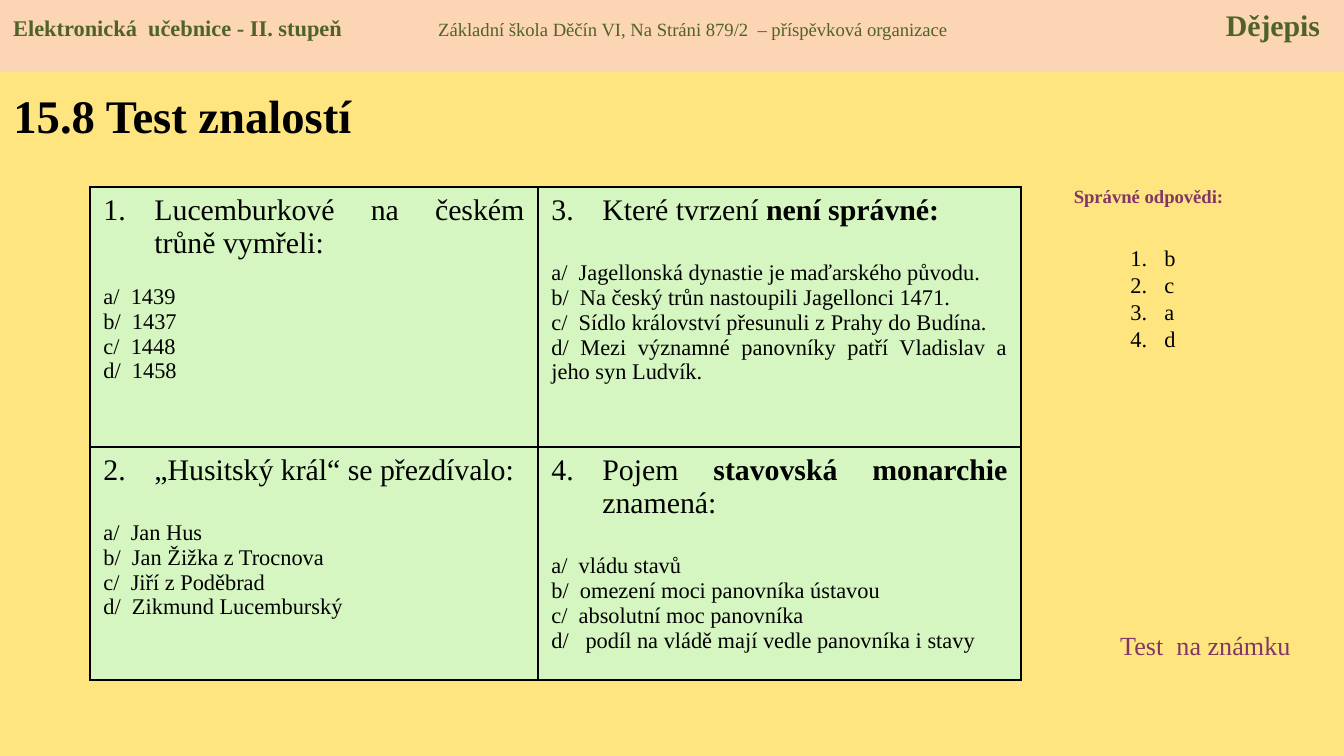
"""Builds a history quiz slide with a two-by-two question table and an answer key."""
from dataclasses import dataclass

from lxml import etree
from pptx import Presentation
from pptx import util as u
from pptx.dml.color import RGBColor
from pptx.enum import shapes, text
from pptx.oxml.ns import qn


@dataclass(frozen=True)
class Theme:
    font: str = "Times New Roman"
    ink: str = "000000"
    green: str = "4F6228"
    plum: str = "813763"
    page: str = "FFE580"
    banner: str = "FCD5B5"
    cell: str = "D5F6C0"
    title: int = 25
    question: int = 16
    note: int = 14
    body: int = 12
    small: int = 10


THEME = Theme()
PX = 914400 / 134.4
INDENT = 51
KEY_INDENT = 34

HEADER = [
    ("Elektronická  učebnice - II. stupeň", THEME.body, True),
    ("\tZákladní škola Děčín VI, Na Stráni 879/2  – příspěvková organizace", THEME.small, False),
    ("\tDějepis", THEME.question, True),
]
HEADER_TABS = [(425, "l"), (1307, "r")]
TITLE = "15.8 Test znalostí"
KEY_TITLE = "Správné odpovědi:"
KEY = ["b", "c", "a", "d"]
NOTE = "Test  na známku"
QUESTIONS = [
    ([("Lucemburkové na českém trůně vymřeli:", False)], 13,
     ["a/  1439", "b/  1437", "c/  1448", "d/  1458"]),
    ([("„Husitský král“ se přezdívalo:", False)], 18,
     ["a/  Jan Hus", "b/  Jan Žižka z Trocnova", "c/  Jiří z Poděbrad",
      "d/  Zikmund Lucemburský"]),
    ([("Které tvrzení ", False), ("není správné:", True)], 18,
     ["a/  Jagellonská dynastie je maďarského původu.",
      "b/  Na český trůn nastoupili Jagellonci 1471.",
      "c/  Sídlo království přesunuli z Prahy do Budína.",
      "d/ Mezi významné panovníky patří Vladislav a jeho syn Ludvík."]),
    ([("Pojem ", False), ("stavovská monarchie ", True), ("znamená:", False)], 18,
     ["a/  vládu stavů", "b/  omezení moci panovníka ústavou",
      "c/  absolutní moc panovníka",
      "d/   podíl na vládě mají vedle panovníka i stavy"]),
]
COLUMNS = [448, 483]
ROWS = [260, 233]


def px(value):
    return u.Emu(round(value * PX))


def area(*lengths):
    return [px(length) for length in lengths]


def style(span, size, color=THEME.ink, bold=False):
    span.font.name = THEME.font
    span.font.size = u.Pt(size)
    span.font.bold = bold
    span.font.color.rgb = RGBColor.from_string(color)


def add_spans(para, spans, color=THEME.ink):
    for words, size, bold in spans:
        span = para.add_run()
        span.text = words
        style(span, size, color, bold)


def paint(target, color):
    target.fill.solid()
    target.fill.fore_color.rgb = RGBColor.from_string(color)


def number(para, indent, start=1):
    props = para._p.get_or_add_pPr()
    props.set("marL", str(px(indent)))
    props.set("indent", str(-px(indent)))
    etree.SubElement(props, qn("a:buFont"), typeface=THEME.font)
    etree.SubElement(props, qn("a:buAutoNum"), type="arabicPeriod", startAt=str(start))


def add_borders(cell):
    props = cell._tc.get_or_add_tcPr()
    for side in ("lnL", "lnR", "lnT", "lnB"):
        line = etree.SubElement(props, qn(f"a:{side}"), w=str(u.Pt(1)))
        fill = etree.SubElement(line, qn("a:solidFill"))
        etree.SubElement(fill, qn("a:srgbClr"), val=THEME.ink)


def add_header(page):
    banner = page.shapes.add_shape(shapes.MSO_SHAPE.RECTANGLE, *area(0, 0, 1344, 72))
    banner.shadow.inherit = False
    paint(banner, THEME.banner)
    banner.line.fill.background()
    banner.text_frame.vertical_anchor = text.MSO_ANCHOR.TOP
    para = banner.text_frame.paragraphs[0]
    para.alignment = text.PP_ALIGN.LEFT
    add_spans(para, HEADER, THEME.green)
    stops = etree.SubElement(para._p.get_or_add_pPr(), qn("a:tabLst"))
    for position, side in HEADER_TABS:
        etree.SubElement(stops, qn("a:tab"), pos=str(px(position)), algn=side)


def place(box, *lengths):
    box.left, box.top, box.width, box.height = area(*lengths)
    box.text_frame.auto_size = text.MSO_AUTO_SIZE.NONE


def add_title(page):
    box = page.shapes.title
    place(box, 0, 71, 487, 87)
    box.text_frame.text = TITLE
    box.text_frame.vertical_anchor = text.MSO_ANCHOR.MIDDLE
    para = box.text_frame.paragraphs[0]
    para.alignment = text.PP_ALIGN.LEFT
    style(para.runs[0], THEME.title, bold=True)


def add_key(page):
    box = page.placeholders[1]
    place(box, 1117, 237, 74, 121)
    box.text_frame.text = "\n".join(KEY)
    for para in box.text_frame.paragraphs:
        para.space_before = u.Pt(0)
        para.line_spacing = u.Pt(14.5)
        number(para, KEY_INDENT)
        style(para.runs[0], THEME.body)


def add_label(page, words, lengths, size, bold, align):
    box = page.shapes.add_textbox(*area(*lengths))
    box.text_frame.word_wrap = True
    box.text_frame.text = words
    para = box.text_frame.paragraphs[0]
    para.alignment = align
    style(para.runs[0], size, THEME.plum, bold)


def fill_cell(cell, index, question, gap, options):
    add_borders(cell)
    paint(cell, THEME.cell)
    para = cell.text_frame.paragraphs[0]
    para.alignment = text.PP_ALIGN.JUSTIFY
    para.space_after = u.Pt(gap)
    number(para, INDENT, index + 1)
    add_spans(para, [(words, THEME.question, bold) for words, bold in question])
    for option in options:
        para = cell.text_frame.add_paragraph()
        para.alignment = text.PP_ALIGN.JUSTIFY
        add_spans(para, [(option, THEME.body, False)])


def add_quiz(page):
    table = page.shapes.add_table(
        len(ROWS), len(COLUMNS), *area(90, 187, sum(COLUMNS), sum(ROWS))).table
    table.first_row = table.horz_banding = False
    for column, width in zip(table.columns, COLUMNS):
        column.width = px(width)
    for row, height in zip(table.rows, ROWS):
        row.height = px(height)
    for index, item in enumerate(QUESTIONS):
        column, row = divmod(index, len(ROWS))
        fill_cell(table.cell(row, column), index, *item)


def main():
    deck = Presentation()
    deck.slide_width, deck.slide_height = area(1344, 756)
    page = deck.slides.add_slide(deck.slide_layouts[1])
    paint(page.background, THEME.page)
    add_title(page)
    add_label(page, KEY_TITLE, (1043, 178, 211, 36), THEME.small, True, text.PP_ALIGN.CENTER)
    add_quiz(page)
    add_key(page)
    add_label(page, NOTE, (1107, 623, 211, 46), THEME.note, False, text.PP_ALIGN.LEFT)
    add_header(page)
    deck.save("out.pptx")


if __name__ == "__main__":
    main()
